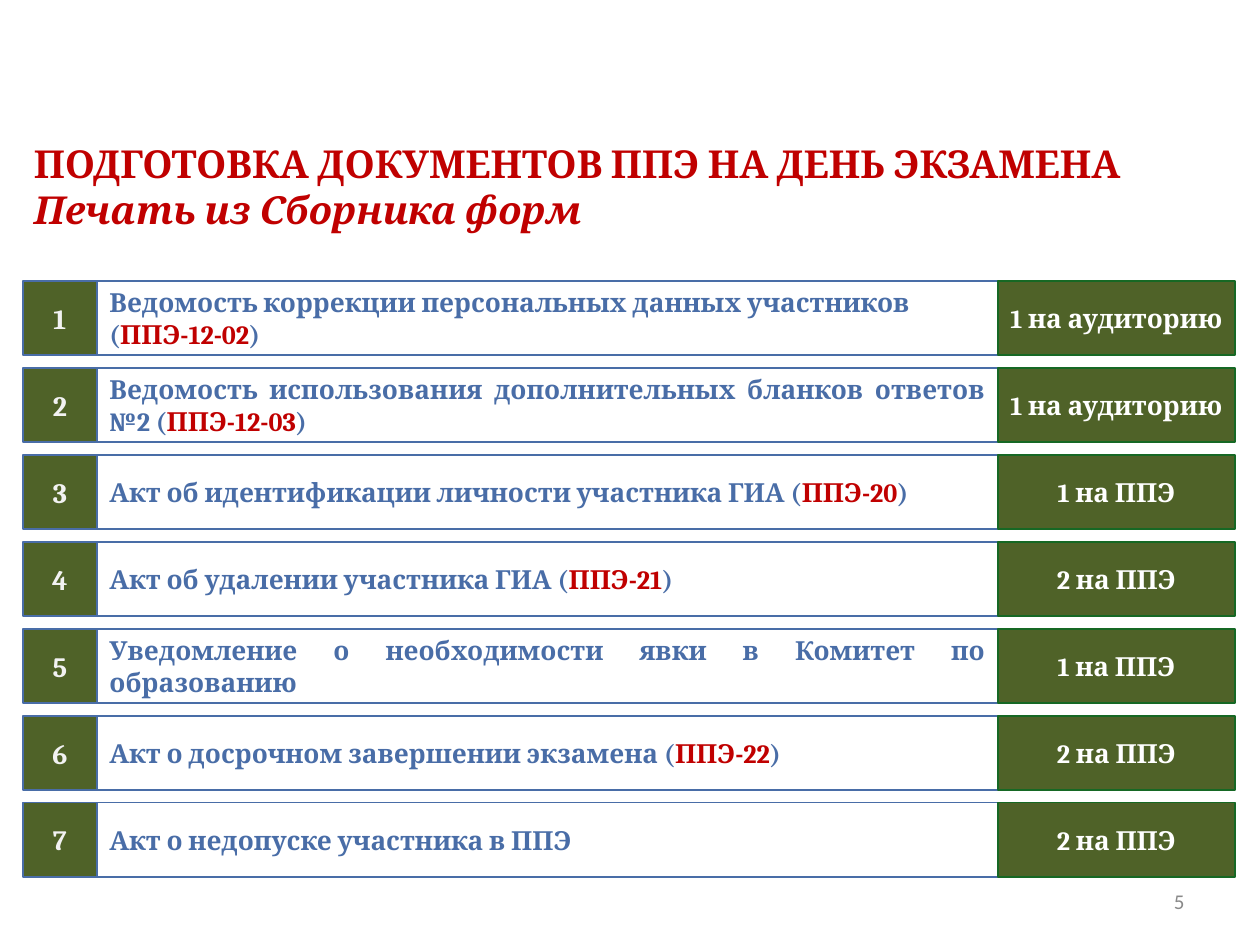
from pptx import Presentation
from pptx.dml.color import RGBColor
from pptx.enum.shapes import MSO_SHAPE as SHAPE
from pptx.enum.text import MSO_ANCHOR as ANCHOR, PP_ALIGN as ALIGN
from pptx.util import Inches, Pt

COLORS = {
    "blue": "496DA7",
    "red": "C00000",
    "olive": "4F6228",
    "green": "166824",
    "white": "FFFFFF",
    "pale": "F2F2F2",
    "gray": "898989",
}

DOCUMENTS = [
    ([["Ведомость коррекции персональных данных участников "],
      ["(", "ППЭ-12-02", ")"]], "1 на аудиторию"),
    ([["Ведомость использования дополнительных бланков ответов №2 (",
       "ППЭ-12-03", ")"]], "1 на аудиторию"),
    ([["Акт об идентификации личности участника ГИА (", "ППЭ-20", ")"]], "1 на ППЭ"),
    ([["Акт об удалении участника ГИА (", "ППЭ-21", ")"]], "2 на ППЭ"),
    ([["Уведомление о необходимости явки в Комитет по образованию"]], "1 на ППЭ"),
    ([["Акт о досрочном завершении экзамена (", "ППЭ-22", ")"]], "2 на ППЭ"),
    ([["Акт о недопуске участника в ППЭ"]], "2 на ППЭ"),
]

TOP, STEP, HEIGHT = 2.23, 0.69, 0.59


def rgb(name):
    return RGBColor.from_string(COLORS[name])


def add_text(p, text, size=15, color="blue", font="Cambria", bold=True, italic=False):
    r = p.add_run()
    r.text = text
    r.font.name = font
    r.font.size = Pt(size)
    r.font.bold = bold
    r.font.italic = italic
    r.font.color.rgb = rgb(color)


class SlideBuilder:
    def __init__(self, prs):
        self.s = prs.slides.add_slide(prs.slide_layouts[6])

    def paragraphs(self, tf, count, align):
        for i in range(count):
            p = tf.paragraphs[0] if i == 0 else tf.add_paragraph()
            p.alignment = align
            yield p

    def textbox(self, x, y, w, h, lines, align=ALIGN.LEFT, anchor=ANCHOR.TOP):
        tf = self.s.shapes.add_textbox(Inches(x), Inches(y), Inches(w), Inches(h)).text_frame
        tf.word_wrap = True
        tf.vertical_anchor = anchor
        for p, (text, style) in zip(self.paragraphs(tf, len(lines), align), lines):
            add_text(p, text, **style)

    def box(self, x, y, w, line="blue", fill=None):
        sp = self.s.shapes.add_shape(
            SHAPE.RECTANGLE, Inches(x), Inches(y), Inches(w), Inches(HEIGHT))
        sp.shadow.inherit = False
        if fill:
            sp.fill.solid()
            sp.fill.fore_color.rgb = rgb(fill)
        else:
            sp.fill.background()
        sp.line.color.rgb = rgb(line)
        sp.line.width = Pt(1)
        tf = sp.text_frame
        tf.word_wrap = True
        tf.vertical_anchor = ANCHOR.MIDDLE
        return tf

    def label(self, x, y, w, text, line="blue", **style):
        tf = self.box(x, y, w, line, "olive")
        for p in self.paragraphs(tf, 1, ALIGN.CENTER):
            add_text(p, text, **style)

    def description(self, x, y, w, lines):
        tf = self.box(x, y, w)
        for p, parts in zip(self.paragraphs(tf, len(lines), ALIGN.JUSTIFY), lines):
            for part in parts:
                add_text(p, part, color="red" if part.startswith("ППЭ-") else "blue")

    def document_row(self, number, lines, copies):
        y = TOP + STEP * (number - 1)
        self.description(0.77, y, 7.15, lines)
        self.label(0.18, y, 0.59, str(number), size=16, color="pale")
        self.label(7.92, y, 1.88, copies, line="green", color="white")


def main():
    prs = Presentation()
    prs.slide_width, prs.slide_height = Inches(10), Inches(7.5)
    slide = SlideBuilder(prs)
    title = {"size": 22, "color": "red"}
    slide.textbox(0.17, 1.06, 10 - 0.17, 0.84, [
        ("ПОДГОТОВКА ДОКУМЕНТОВ ППЭ НА ДЕНЬ ЭКЗАМЕНА", title),
        ("Печать из Сборника форм", {**title, "italic": True}),
    ])
    for number, (lines, copies) in enumerate(DOCUMENTS, 1):
        slide.document_row(number, lines, copies)
    page = {"size": 12, "color": "gray", "font": "Calibri", "bold": False}
    slide.textbox(7.17, 6.95, 2.33, 0.4, [("5", page)], ALIGN.RIGHT, ANCHOR.MIDDLE)
    prs.save("out.pptx")


if __name__ == "__main__":
    main()
